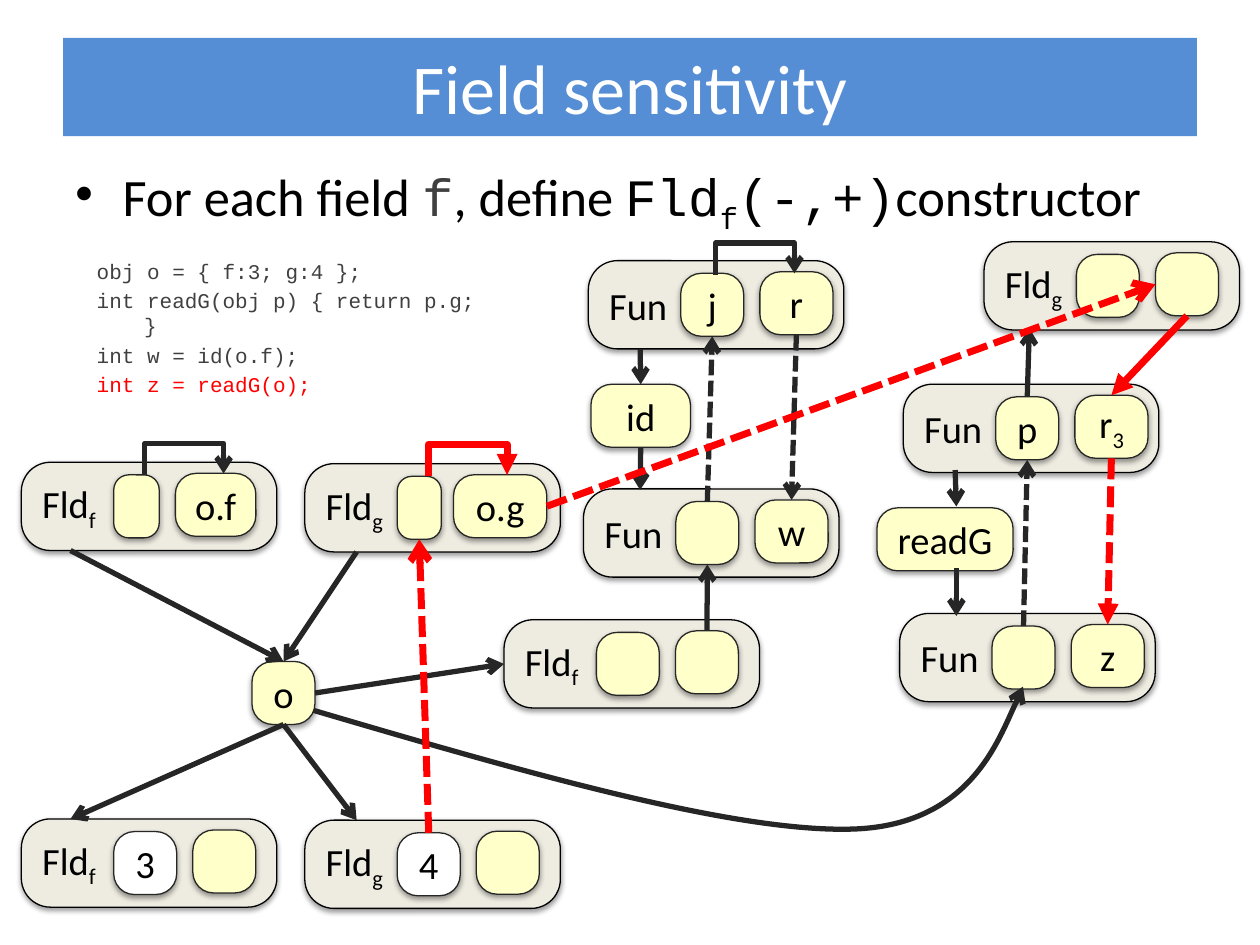
from dataclasses import dataclass

from lxml.etree import SubElement
from pptx import Presentation
from pptx.dml.color import RGBColor
from pptx.enum.dml import MSO_LINE
from pptx.enum.shapes import MSO_CONNECTOR, MSO_SHAPE
from pptx.enum.text import MSO_ANCHOR, PP_ALIGN
from pptx.oxml.ns import qn
from pptx.util import Pt

TOP, LEFT, BOTTOM, RIGHT = range(4)


@dataclass(frozen=True)
class Theme:
    sans: str = "Calibri"
    mono: str = "Courier New"
    title: int = 40
    head: int = 30
    label: int = 22
    code: int = 12
    banner: str = "558ED5"
    frame: str = "EEECE1"
    cell: str = "FFFFCA"
    white: str = "FFFFFF"
    black: str = "000000"
    ink: str = "262626"
    gray: str = "404040"
    red: str = "FF0000"


class Canvas:
    def __init__(self, slide, theme):
        self.slide = slide
        self.theme = theme

    def style(self, font, size=None, color=None, face=None):
        if size:
            font.size = Pt(size)
        if color:
            font.color.rgb = RGBColor.from_string(color)
        if face:
            font.name = face

    def add_words(self, para, text, **look):
        """Add text to a paragraph; the letter after an underscore is lowered."""
        base, _, low = text.partition("_")
        for part in filter(None, (base, low)):
            run = para.add_run()
            run.text = part
            self.style(run.font, **look)
            if part is low:
                run.font._element.set("baseline", "-25000")

    def title(self, text, x, y, w, h):
        shape = self.slide.shapes.title
        shape.left, shape.top, shape.width, shape.height = map(Pt, (x, y, w, h))
        shape.fill.solid()
        shape.fill.fore_color.rgb = RGBColor.from_string(self.theme.banner)
        shape.text_frame.vertical_anchor = MSO_ANCHOR.MIDDLE
        para = shape.text_frame.paragraphs[0]
        para.alignment = PP_ALIGN.CENTER
        self.add_words(para, text)
        self.style(para.font, self.theme.title, self.theme.white, self.theme.sans)

    def text(self, paras, x, y, w, h, size, face, bullet=None):
        """Add a text box; each paragraph is a list of (text, look) runs."""
        frame = self.slide.shapes.add_textbox(*map(Pt, (x, y, w, h))).text_frame
        frame.word_wrap = True
        for i, runs in enumerate(paras):
            para = frame.add_paragraph() if i else frame.paragraphs[0]
            props = para._p.get_or_add_pPr()
            props.set("marL", str(Pt(27)))
            props.set("indent", str(-Pt(27)))
            if bullet:
                SubElement(props, qn("a:buChar"), char=bullet)
            para.space_before = Pt(size * 0.2)
            self.style(para.font, size, face=face)
            for words, look in runs:
                self.add_words(para, words, **look)

    def block(self, shapes, x, y, w, h, text, fill, edge, align=PP_ALIGN.CENTER):
        shape = shapes.add_shape(MSO_SHAPE.ROUNDED_RECTANGLE, *map(Pt, (x, y, w, h)))
        shape.adjustments[0] = 0.33
        shape.fill.solid()
        shape.fill.fore_color.rgb = RGBColor.from_string(fill)
        shape.line.color.rgb = RGBColor.from_string(edge)
        shape.line.width = Pt(0.75)
        shape.shadow.inherit = False
        glow = SubElement(shape._element.spPr.find(qn("a:effectLst")), qn("a:outerShdw"),
                          blurRad=str(Pt(3.1)), dist=str(Pt(1.6)), dir="5400000", rotWithShape="0")
        tint = SubElement(glow, qn("a:srgbClr"), val=self.theme.black)
        SubElement(tint, qn("a:alpha"), val="38000")
        frame = shape.text_frame
        frame.vertical_anchor = MSO_ANCHOR.MIDDLE
        if align == PP_ALIGN.CENTER:
            frame.margin_left = frame.margin_right = 0
        if text:
            para = frame.paragraphs[0]
            para.alignment = align
            self.add_words(para, text)
            self.style(para.font, self.theme.label, self.theme.black, self.theme.sans)
        return shape

    def cell(self, text, x, y, w=36, shapes=None, fill=None):
        return self.block(shapes or self.slide.shapes, x, y, w, 36, text,
                          fill or self.theme.cell, self.theme.ink)

    def term(self, name, x, y, one="", two="", w1=36, x2=98, w2=36, fill=None):
        """Group a constructor with its two argument cells; return all three."""
        shapes = self.slide.shapes.add_group_shape().shapes
        frame = self.block(shapes, x, y, 146, 50.4, name, self.theme.frame,
                           self.theme.black, PP_ALIGN.LEFT)
        first = self.cell(one, x + 52.8, y + 7.2, w1, shapes, fill)
        return frame, first, self.cell(two, x + x2, y + 6.3, w2, shapes)

    def stroke(self, item, hot=False, dash=False, head=None):
        item.line.color.rgb = RGBColor.from_string(self.theme.red if hot else self.theme.ink)
        item.line.width = Pt(4 if hot else 3)
        if dash:
            item.line.dash_style = MSO_LINE.SQUARE_DOT
        SubElement(item.line._get_or_add_ln(), qn("a:tailEnd"),
                   type=head or ("triangle" if hot else "arrow"))
        SubElement(item._element.spPr, qn("a:effectLst"))

    def arrow(self, start, end, **look):
        """Draw an arrow; an end is an (x, y) point or a (shape, side) pair."""
        wire = self.slide.shapes.add_connector(MSO_CONNECTOR.STRAIGHT, 0, 0, 0, 0)
        if isinstance(start[0], (int, float)):
            wire.begin_x, wire.begin_y = map(Pt, start)
        else:
            wire.begin_connect(*start)
        if isinstance(end[0], (int, float)):
            wire.end_x, wire.end_y = map(Pt, end)
        else:
            wire.end_connect(*end)
        self.stroke(wire, **look)

    def loop(self, x, y, **look):
        """Draw a bent arrow from (x, y) up, right and down to the next cell."""
        span, rise, drop = 45, 18.4, 0.75
        midx, midy = x + span / 2, y - drop / 2
        wire = self.slide.shapes.add_connector(
            MSO_CONNECTOR.ELBOW, Pt(midx + drop / 2), Pt(midy + span / 2),
            Pt(midx - drop / 2), Pt(midy - span / 2))
        props = wire._element.spPr
        props.find(qn("a:xfrm")).set("rot", "5400000")
        SubElement(props.find(qn("a:prstGeom")).find(qn("a:avLst")), qn("a:gd"),
                   name="adj1", fmla=f"val {round(rise / drop * 100000)}")
        self.stroke(wire, **look)

    def curve(self, start, points):
        """Draw an arrow of cubic curves, three points to a curve."""
        pen = self.slide.shapes.build_freeform(*map(Pt, start))
        pen.add_line_segments([(Pt(x), Pt(y)) for x, y in points], close=False)
        shape = pen.convert_to_shape()
        shape.fill.background()
        trace = next(shape._element.iter(qn("a:path")))
        legs = trace.findall(qn("a:lnTo"))
        for i in range(0, len(legs), 3):
            bend = SubElement(trace, qn("a:cubicBezTo"))
            for leg in legs[i:i + 3]:
                bend.append(leg[0])
                trace.remove(leg)
        self.stroke(shape)


def main():
    deck = Presentation()
    deck.slide_width, deck.slide_height = Pt(720), Pt(540)
    theme = Theme()
    art = Canvas(deck.slides.add_slide(deck.slide_layouts[5]), theme)

    art.title("Field sensitivity", 36, 21.6, 648, 56.2)
    black = {"color": theme.black}
    mono = {"color": theme.black, "face": theme.mono}
    art.text([[("For each field ", black), ("f", {"color": theme.gray, "face": theme.mono}),
               (", define ", black), ("Fld_f", mono), ("(-,+)", mono), ("constructor", black)]],
             36, 90, 648, 54, theme.head, theme.sans, "•")
    code = ["obj o = { f:3; g:4 };", "int readG(obj p) { return p.g; }", "int w = id(o.f);"]
    lines = [[(line, {"color": theme.gray})] for line in code]
    lines.append([("int z = readG(o);", {"color": theme.red})])
    art.text(lines, 48.2, 144, 234, 91.4, theme.code, theme.mono)

    name = art.cell("id", 337.7, 219.6, 56.9)
    art.cell("readG", 501.1, 290.2, 77.8)
    obj = art.cell("o", 144, 378)
    _, j, r = art.term("Fun", 336.2, 149, "j", "r", w2=41.8)
    _, p, r3 = art.term("Fun", 516.2, 219.6, "p", "r_3", w2=41.8)
    _, _, got = art.term("Fld_g", 562.3, 138.2)
    art.term("Fld_f", 12.2, 264.2, "", "o.f", 26, 88, 46)
    _, put, og = art.term("Fld_g", 174.2, 265, "", "o.g", 25.2, 85, 53.3)
    art.term("Fld_f", 12.2, 468, "3", fill=theme.white)
    _, four, _ = art.term("Fld_g", 174.2, 468.7, "4", fill=theme.white)
    _, arg, z = art.term("Fun", 514.1, 350.6, "", "z", w2=41.8)
    fld, _, out = art.term("Fld_f", 288, 354.2)
    _, par, w = art.term("Fun", 333.4, 279.4, "", "w", w2=41.8)

    art.arrow((365.8, 199.4), (name, TOP))
    art.arrow((name, BOTTOM), (365.8, 280))
    art.arrow((545.8, 268.6), (546.5, 289.4))
    art.arrow((546.5, 324.7), (546.5, 352))
    art.arrow((p, TOP), (588.2, 187.5))
    art.arrow((got, BOTTOM), (r3, TOP), hot=True)
    for x, y in ((40.3, 314.6), (203.8, 315.4)):
        art.arrow((x, y), (obj, TOP))
    for x, y in ((40.3, 468), (203.8, 468.7)):
        art.arrow((obj, BOTTOM), (x, y))
    art.arrow((obj, RIGHT), (fld, LEFT))
    art.arrow((out, TOP), (par, BOTTOM))
    art.curve((179.3, 406), [(299.5, 441.4), (419.8, 475.9), (487.4, 473.8),
                             (555.1, 471.6), (584.6, 392.4), (584.6, 392.4)])
    art.arrow((par, TOP), (j, BOTTOM), dash=True)
    art.arrow((r, BOTTOM), (w, TOP), dash=True)
    art.arrow((arg, TOP), (p, BOTTOM), dash=True)
    art.arrow((r3, BOTTOM), (z, TOP), hot=True, dash=True)
    art.loop(82.8, 271.4)
    art.loop(409, 157)
    art.loop(244.8, 272.2, hot=True)
    art.arrow((og, RIGHT), (got, LEFT), hot=True, dash=True, head="arrow")
    art.arrow((four, TOP), (put, BOTTOM), hot=True, dash=True, head="arrow")
    deck.save("out.pptx")


if __name__ == "__main__":
    main()
